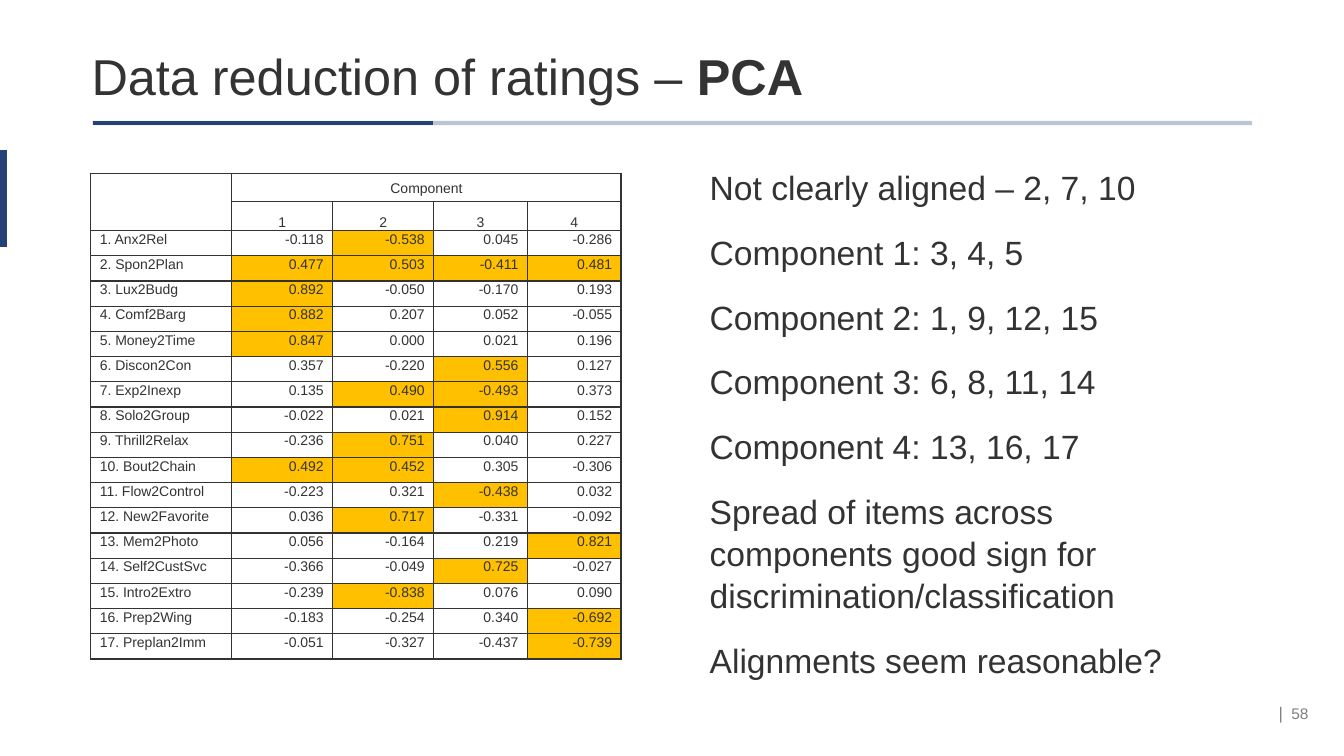
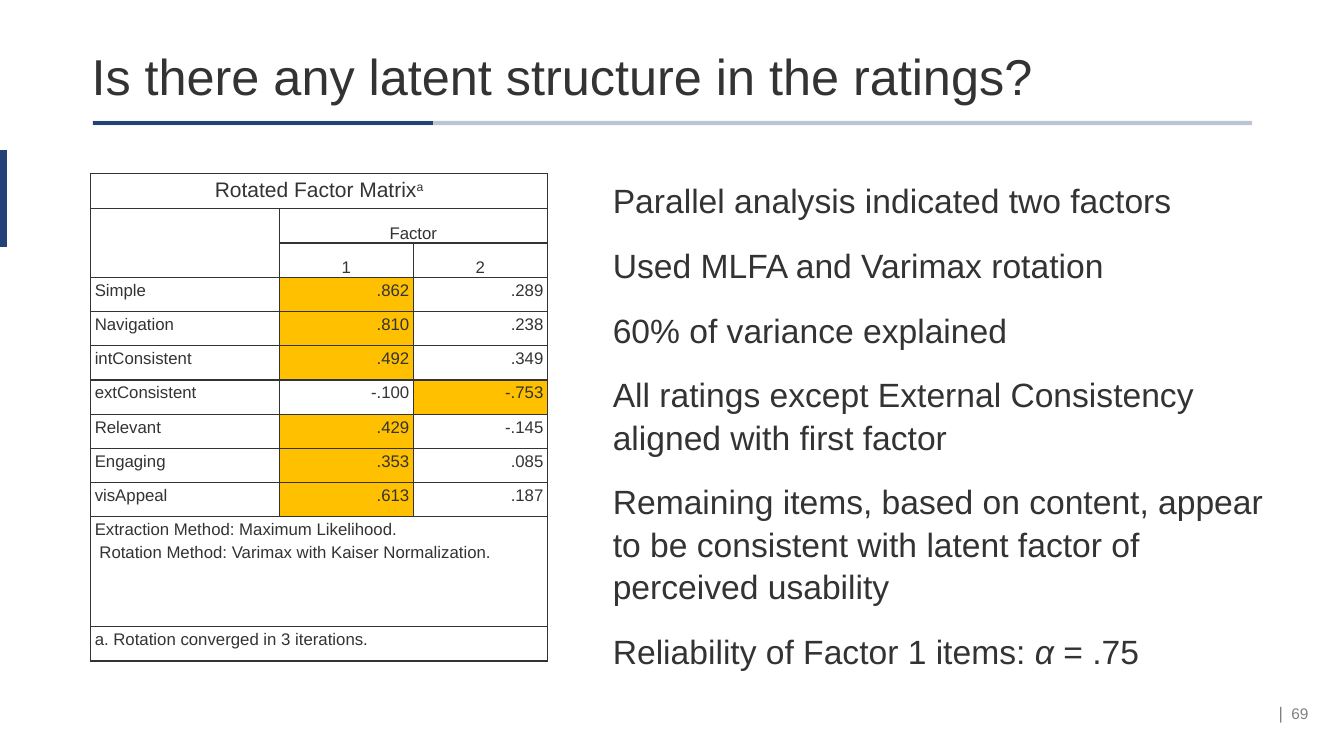
import pptx
import pptx.util
import pptx.dml.color
import pptx.enum.shapes
import pptx.enum.text
import pptx.oxml
import pptx.oxml.ns

Inches, Pt = pptx.util.Inches, pptx.util.Pt
RGBColor = pptx.dml.color.RGBColor
ALIGN = pptx.enum.text.PP_ALIGN
ANCHOR = pptx.enum.text.MSO_ANCHOR
qn = pptx.oxml.ns.qn

NAVY = RGBColor(0x25, 0x42, 0x77)
INK = RGBColor(0x33, 0x33, 0x33)
GRAY = RGBColor(0x80, 0x80, 0x80)
AMBER = RGBColor(0xFF, 0xC0, 0x00)
FONT = "Arial"

# Each loading row: label, values, numbers of the highlighted columns
COMPONENT_LOADINGS = [
    ("1. Anx2Rel", "-0.118 -0.538 0.045 -0.286", [2]),
    ("2. Spon2Plan", "0.477 0.503 -0.411 0.481", [1, 2, 3, 4]),
    ("3. Lux2Budg", "0.892 -0.050 -0.170 0.193", [1]),
    ("4. Comf2Barg", "0.882 0.207 0.052 -0.055", [1]),
    ("5. Money2Time", "0.847 0.000 0.021 0.196", [1]),
    ("6. Discon2Con", "0.357 -0.220 0.556 0.127", [3]),
    ("7. Exp2Inexp", "0.135 0.490 -0.493 0.373", [2, 3]),
    ("8. Solo2Group", "-0.022 0.021 0.914 0.152", [3]),
    ("9. Thrill2Relax", "-0.236 0.751 0.040 0.227", [2]),
    ("10. Bout2Chain", "0.492 0.452 0.305 -0.306", [1, 2]),
    ("11. Flow2Control", "-0.223 0.321 -0.438 0.032", [3]),
    ("12. New2Favorite", "0.036 0.717 -0.331 -0.092", [2]),
    ("13. Mem2Photo", "0.056 -0.164 0.219 0.821", [4]),
    ("14. Self2CustSvc", "-0.366 -0.049 0.725 -0.027", [3]),
    ("15. Intro2Extro", "-0.239 -0.838 0.076 0.090", [2]),
    ("16. Prep2Wing", "-0.183 -0.254 0.340 -0.692", [4]),
    ("17. Preplan2Imm", "-0.051 -0.327 -0.437 -0.739", [4]),
]
FACTOR_LOADINGS = [
    ("Simple", ".862 .289", [1]),
    ("Navigation", ".810 .238", [1]),
    ("intConsistent", ".492 .349", [1]),
    ("extConsistent", "-.100 -.753", [2]),
    ("Relevant", ".429 -.145", [1]),
    ("Engaging", ".353 .085", [1]),
    ("visAppeal", ".613 .187", [1]),
]
FACTOR_NOTES = [
    "Extraction Method: Maximum Likelihood.\n"
    " Rotation Method: Varimax with Kaiser Normalization.",
    "a. Rotation converged in 3 iterations.",
]

# Text is a list of runs: (text, style), style being "", "b", "i" or "sup"
SLIDES = [
    {
        "number": 58,
        "title": [("Data reduction of ratings – ", ""), ("PCA", "b")],
        "points_at": (6.94, 1.59, 5.08, 5.08),
        "points": [
            [("Not clearly aligned – 2, 7, 10", "")],
            [("Component 1: 3, 4, 5", "")],
            [("Component 2: 1, 9, 12, 15", "")],
            [("Component 3: 6, 8, 11, 14", "")],
            [("Component 4: 13, 16, 17", "")],
            [("Spread of items across components good sign for "
              "discrimination/classification", "")],
            [("Alignments seem reasonable?", "")],
        ],
        "matrix": {
            "caption": None, "heading": "Component", "notes": [],
            "loadings": COMPONENT_LOADINGS,
            "columns": [1.4, 1, 1, 0.93, 0.93],
            "rows": [0.26, 0.29] + [0.25] * len(COMPONENT_LOADINGS),
            "size": 10, "spacing": 1.07, "side_margin": 0.09,
        },
    },
    {
        "number": 69,
        "title": [("Is there any latent structure in the ratings?", "")],
        "points_at": (5.98, 1.72, 6.93, 4.86),
        "points": [
            [("Parallel analysis indicated two factors", "")],
            [("Used MLFA and Varimax rotation", "")],
            [("60% of variance explained", "")],
            [("All ratings except External Consistency aligned with "
              "first factor", "")],
            [("Remaining items, based on content, appear to be consistent "
              "with latent factor of perceived usability", "")],
            [("Reliability of Factor 1 items: ", ""), ("α", "i"),
             (" = .75", "")],
        ],
        "matrix": {
            "caption": [("Rotated Factor Matrix", ""), ("a", "sup")],
            "heading": "Factor", "notes": FACTOR_NOTES,
            "loadings": FACTOR_LOADINGS,
            "columns": [1.87, 1.33, 1.33],
            "rows": [0.35] + [0.34] * (2 + len(FACTOR_LOADINGS)) + [1.09, 0.34],
            "size": 12, "spacing": Pt(16), "side_margin": 0.04,
        },
    },
]


def style_font(paragraph, size, color=INK):
    paragraph.font.name = FONT
    paragraph.font.size = Pt(size)
    paragraph.font.color.rgb = color


def write_runs(paragraph, runs, size):
    style_font(paragraph, size)
    for text, style in runs:
        run = paragraph.add_run()
        run.text = text
        if style == "b":
            run.font.bold = True
        elif style == "i":
            run.font.italic = True
        elif style == "sup":
            run.font._element.set("baseline", "30000")


def add_text_frame(slide, box, anchor=ANCHOR.TOP):
    frame = slide.shapes.add_textbox(*map(Inches, box)).text_frame
    frame.word_wrap = True
    frame.vertical_anchor = anchor
    return frame


def add_rule(slide, start, end, width, opacity=None):
    rule = slide.shapes.add_connector(
        pptx.enum.shapes.MSO_CONNECTOR.STRAIGHT, *map(Inches, start + end))
    rule.line.color.rgb = NAVY
    rule.line.width = Pt(width)
    properties = rule._element.spPr
    if opacity:
        color = properties.find(".//" + qn("a:srgbClr"))
        color.append(pptx.oxml.parse_xml(
            f'<a:alpha {pptx.oxml.ns.nsdecls("a")} val="{opacity * 1000}"/>'))
    properties.append(pptx.oxml.parse_xml(
        f'<a:effectLst {pptx.oxml.ns.nsdecls("a")}/>'))


def add_frame_parts(slide, title, number):
    """Draw the rules, the title and the page number that all slides share."""
    add_rule(slide, (0.03, 1.49), (0.03, 2.45), 5)
    add_rule(slide, (0.92, 1.22), (12.42, 1.22), 3, opacity=30)
    add_rule(slide, (0.92, 1.22), (4.29, 1.22), 3)

    heading = add_text_frame(slide, (0.81, 0.4, 11.5, 0.77), ANCHOR.MIDDLE)
    heading.paragraphs[0].line_spacing = 0.9
    write_runs(heading.paragraphs[0], title, 36)

    footer = add_text_frame(slide, (12.54, 6.86, 0.58, 0.42), ANCHOR.MIDDLE)
    footer.margin_left = footer.margin_right = Inches(0.05)
    page = footer.paragraphs[0]
    page.alignment = ALIGN.CENTER
    style_font(page, 11, GRAY)
    bar, digits = page.add_run(), page.add_run()
    bar.text, digits.text = "|", f" {number}"
    bar.font.size = Pt(12)
    bar.font._element.set("spc", "300")


def add_points(slide, box, points):
    frame = add_text_frame(slide, box)
    frame.auto_size = pptx.enum.text.MSO_AUTO_SIZE.SHAPE_TO_FIT_TEXT
    for index, runs in enumerate(points):
        point = frame.add_paragraph() if index else frame.paragraphs[0]
        point.space_after = Pt(16)
        point.line_spacing = 1.05
        write_runs(point, runs, 24)


def border_cell(cell):
    properties = cell._tc.get_or_add_tcPr()
    for side in ("lnL", "lnR", "lnT", "lnB"):
        properties.append(pptx.oxml.parse_xml(
            f'<a:{side} {pptx.oxml.ns.nsdecls("a")} w="12700"><a:solidFill>'
            f'<a:srgbClr val="{INK}"/></a:solidFill></a:{side}>'))


def add_matrix(slide, matrix):
    columns, rows = matrix["columns"], matrix["rows"]
    table = slide.shapes.add_table(
        len(rows), len(columns), Inches(0.9), Inches(1.72),
        Inches(sum(columns)), Inches(sum(rows))).table
    table.first_row = table.horz_banding = False
    for column, width in zip(table.columns, columns):
        column.width = Inches(width)
    for row, height in zip(table.rows, rows):
        row.height = Inches(height)
    for cell in table.iter_cells():
        border_cell(cell)
        cell.fill.background()
        cell.margin_left = cell.margin_right = Inches(matrix["side_margin"])
        cell.margin_top = cell.margin_bottom = 0
        style_font(cell.text_frame.paragraphs[0], matrix["size"])

    def fill_cell(row, column, text, align, anchor=ANCHOR.TOP):
        cell = table.cell(row, column)
        cell.text_frame.text = text
        cell.vertical_anchor = anchor
        for paragraph in cell.text_frame.paragraphs:
            paragraph.alignment = align
            paragraph.line_spacing = matrix["spacing"]
            style_font(paragraph, matrix["size"])
        return cell

    last = len(columns) - 1
    top = 0
    if matrix["caption"]:
        table.cell(0, 0).merge(table.cell(0, last))
        caption = fill_cell(0, 0, "", ALIGN.CENTER, ANCHOR.MIDDLE)
        write_runs(caption.text_frame.paragraphs[0], matrix["caption"], 15)
        top = 1
    table.cell(top, 0).merge(table.cell(top + 1, 0))
    table.cell(top, 1).merge(table.cell(top, last))
    heading = fill_cell(top, 1, matrix["heading"], ALIGN.CENTER, ANCHOR.BOTTOM)
    if not matrix["caption"]:
        heading.margin_top = heading.margin_bottom = Inches(0.05)
    for column in range(1, last + 1):
        fill_cell(top + 1, column, str(column), ALIGN.CENTER, ANCHOR.BOTTOM)

    first = top + 2
    for row, (label, values, strong) in enumerate(matrix["loadings"], first):
        fill_cell(row, 0, label, ALIGN.LEFT)
        for column, value in enumerate(values.split(), 1):
            cell = fill_cell(row, column, value, ALIGN.RIGHT)
            if column in strong:
                cell.fill.solid()
                cell.fill.fore_color.rgb = AMBER
    for row, note in enumerate(matrix["notes"], first + len(matrix["loadings"])):
        table.cell(row, 0).merge(table.cell(row, last))
        fill_cell(row, 0, note, ALIGN.LEFT)


def main():
    deck = pptx.Presentation()
    deck.slide_width, deck.slide_height = Inches(13.33), Inches(7.5)
    for content in SLIDES:
        slide = deck.slides.add_slide(deck.slide_layouts[6])
        add_frame_parts(slide, content["title"], content["number"])
        add_matrix(slide, content["matrix"])
        add_points(slide, content["points_at"], content["points"])
    deck.save("out.pptx")


if __name__ == "__main__":
    main()
